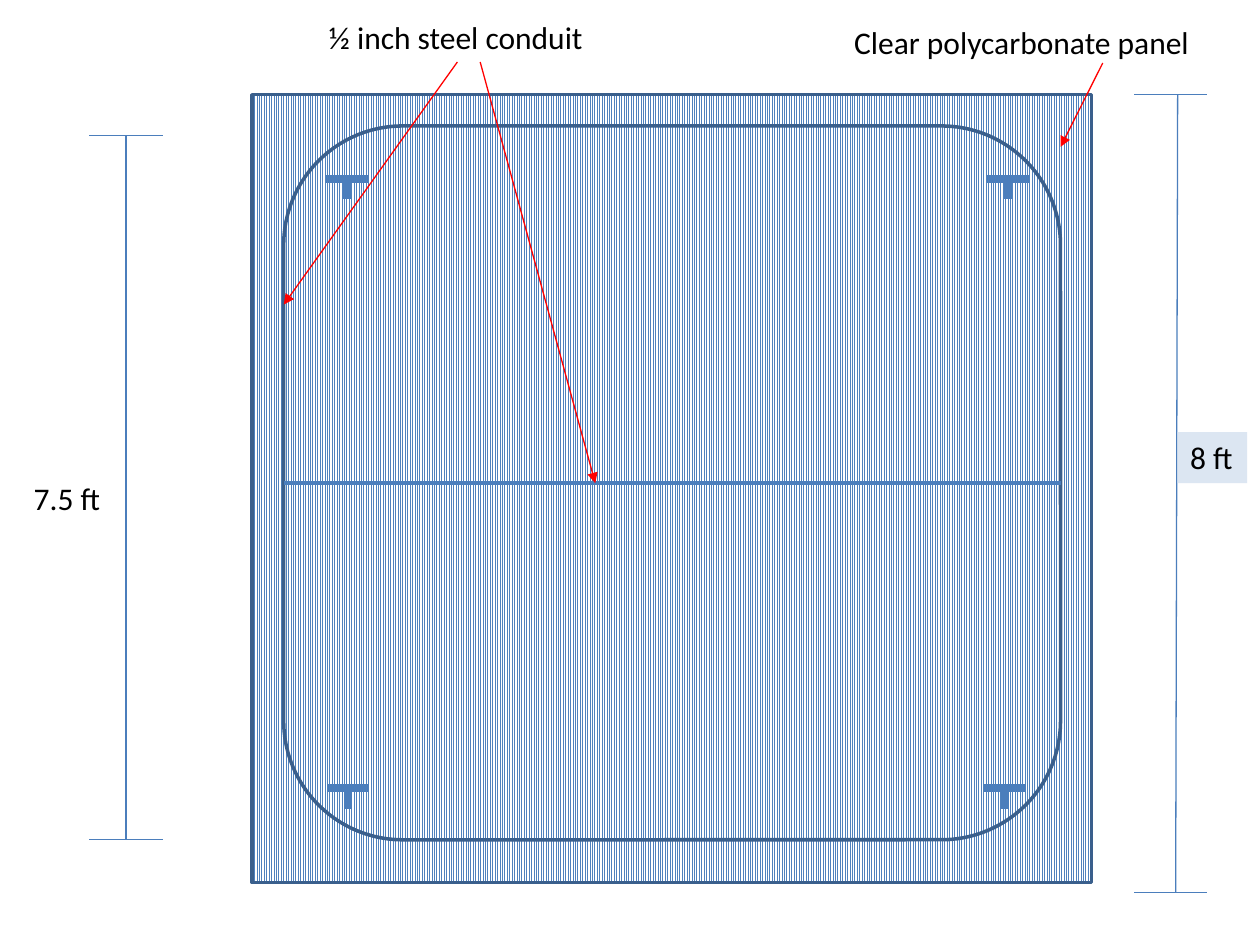
import lxml.etree
import pptx
import pptx.dml.color
import pptx.enum.dml
import pptx.enum.shapes
import pptx.enum.text
import pptx.oxml.ns
import pptx.util

Cm = pptx.util.Cm
Pt = pptx.util.Pt
qn = pptx.oxml.ns.qn
SHAPE = pptx.enum.shapes.MSO_SHAPE

BLUE, OUTLINE, ACCENT = "4B7EBC", "3A5F8C", "4F81BD"
RED, PALE, WHITE, BLACK = "FF0000", "DCE6F2", "FFFFFF", "000000"


def rgb(value):
    return pptx.dml.color.RGBColor.from_string(value)


def apply(obj, values):
    for name, value in values.items():
        setattr(obj, name, value)


class Drawing:
    """Holds the text style and the current slide; lengths are centimetres."""

    font = {"name": "Calibri", "size": Pt(18)}
    frame = {"word_wrap": False,
             "auto_size": pptx.enum.text.MSO_AUTO_SIZE.SHAPE_TO_FIT_TEXT}

    def __init__(self, s):
        self.s = s

    def box(self, kind, x, y, w, h, hatched=False):
        sp = self.s.shapes.add_shape(kind, Cm(x), Cm(y), Cm(w), Cm(h))
        sp.shadow.inherit = False
        if hatched:
            sp.fill.patterned()
            sp.fill.pattern = pptx.enum.dml.MSO_PATTERN.LIGHT_VERTICAL
            sp.fill.fore_color.rgb = rgb(ACCENT)
            sp.fill.back_color.rgb = rgb(WHITE)
        else:
            sp.fill.background()
        sp.line.color.rgb = rgb(OUTLINE)
        sp.line.width = Pt(2)

    def line(self, x1, y1, x2, y2, color=BLUE, width=0.75, arrow=False, parent=None):
        shapes = (parent or self.s).shapes
        cn = shapes.add_connector(pptx.enum.shapes.MSO_CONNECTOR.STRAIGHT,
                                  Cm(x1), Cm(y1), Cm(x2), Cm(y2))
        cn.line.color.rgb = rgb(color)
        cn.line.width = Pt(width)
        if arrow:
            ln = cn.line._get_or_add_ln()
            lxml.etree.SubElement(ln, qn("a:tailEnd"), type="triangle")
        lxml.etree.SubElement(cn._element.spPr, qn("a:effectLst"))

    def dimension(self, left, top, bottom, x_top, x_bottom):
        """A measuring line with a cross bar at each end."""
        self.line(x_top, top, x_bottom, bottom)
        for y in (top, bottom):
            self.line(left, y, left + 1.48, y)

    def bracket(self, x, y):
        """A T-shaped fastener, x and y being the middle of its bar."""
        group = self.s.shapes.add_group_shape()
        self.line(x - 0.42, y, x + 0.42, y, width=4.5, parent=group)
        self.line(x, y, x, y + 0.42, width=4.5, parent=group)

    def label(self, text, x, y, w, fill=None):
        sp = self.s.shapes.add_textbox(Cm(x), Cm(y), Cm(w), Cm(1.03))
        if fill:
            sp.fill.solid()
            sp.fill.fore_color.rgb = rgb(fill)
        tf = sp.text_frame
        apply(tf, self.frame)
        r = tf.paragraphs[0].add_run()
        r.text = text
        apply(r.font, self.font)
        r.font.color.rgb = rgb(BLACK)


def main():
    prs = pptx.Presentation()
    apply(prs, {"slide_width": Cm(25.4), "slide_height": Cm(19.05)})
    d = Drawing(prs.slides.add_slide(prs.slide_layouts[6]))

    # Panel, conduit frame and crossbar
    d.box(SHAPE.RECTANGLE, 5.08, 1.91, 16.93, 15.88, hatched=True)
    d.box(SHAPE.ROUNDED_RECTANGLE, 5.72, 2.54, 15.66, 14.39)
    d.line(5.72, 9.74, 21.38, 9.74, width=2.25)

    for x, y in ((20.32, 3.6), (20.26, 15.88), (7.02, 15.88), (6.99, 3.6)):
        d.bracket(x, y)

    d.dimension(1.8, 2.73, 16.93, 2.54, 2.54)
    d.label("7.5 ft", 0.43, 9.53, 1.88)
    d.dimension(22.86, 1.91, 17.99, 23.74, 23.7)
    d.label("8 ft", 23.74, 8.71, 1.4, fill=PALE)

    # Callouts
    for ends in ((9.22, 1.25, 5.72, 6.14), (9.68, 1.25, 12, 9.74),
                 (22.23, 1.27, 21.38, 2.96)):
        d.line(*ends, color=RED, arrow=True)
    d.label("½ inch steel conduit", 6.38, 0.23, 5.69)
    d.label("Clear polycarbonate panel", 16.97, 0.33, 7.34)

    prs.save("out.pptx")


if __name__ == "__main__":
    main()
